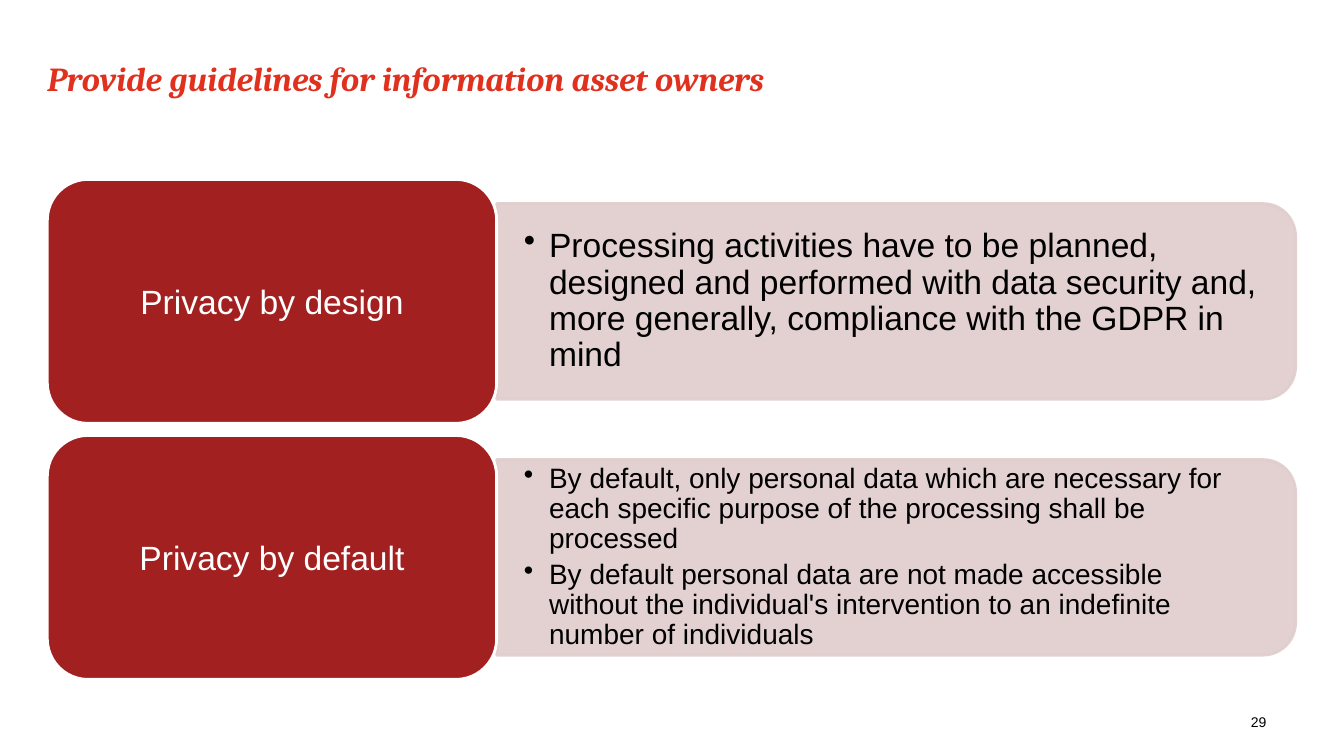
from dataclasses import dataclass

from lxml import etree
from pptx import Presentation
from pptx.dml.color import RGBColor
from pptx.enum.shapes import MSO_SHAPE
from pptx.enum.text import MSO_ANCHOR, MSO_AUTO_SIZE, PP_ALIGN
from pptx.oxml.ns import qn
from pptx.util import Inches, Pt

ROUNDED = MSO_SHAPE.ROUNDED_RECTANGLE
ROUNDED_TOP = MSO_SHAPE.ROUND_2_SAME_RECTANGLE
TOP, MIDDLE = MSO_ANCHOR.TOP, MSO_ANCHOR.MIDDLE
LEFT, CENTER, RIGHT = PP_ALIGN.LEFT, PP_ALIGN.CENTER, PP_ALIGN.RIGHT
NO_AUTOFIT = MSO_AUTO_SIZE.NONE
TITLE_ONLY = 5


@dataclass(frozen=True)
class Theme:
    title_color: str = "E0301E"
    label_fill: str = "A32020"
    panel_fill: str = "E0CDCD"
    white: str = "FFFFFF"
    black: str = "000000"
    title_font: str = "Cambria"
    body_font: str = "Arial"
    large: float = 24
    medium: float = 20
    small: float = 10
    outline: float = 2
    panel_opacity: int = 90


@dataclass(frozen=True)
class Principle:
    label: str
    points: tuple[str, ...]
    size: float


THEME = Theme()

PRINCIPLES = (
    Principle("Privacy by design", (
        "Processing activities have to be planned, designed and performed with data "
        "security and, more generally, compliance with the GDPR in mind",
    ), THEME.large),
    Principle("Privacy by default", (
        "By default, only personal data which are necessary for each specific purpose "
        "of the processing shall be processed",
        "By default personal data are not made accessible without the individual's "
        "intervention to an indefinite number of individuals",
    ), THEME.medium),
)

# Row geometry in inches
MARGIN, FIRST_TOP, ROW_PITCH = 0.47, 1.78, 2.54
LABEL_WIDTH, LABEL_HEIGHT = 4.46, 2.42
PANEL_WIDTH, PANEL_HEIGHT = 7.93, 1.94
TEXT_WIDTH, TEXT_HEIGHT = 7.83, 1.75


def place(box, left: float, top: float, width: float, height: float) -> None:
    box.left, box.top = Inches(left), Inches(top)
    box.width, box.height = Inches(width), Inches(height)


def write(box, lines: tuple[str, ...], size: float, color: str, font: str = THEME.body_font,
          align=LEFT, anchor=TOP, inset: tuple[float, float] = (0, 0)) -> None:
    frame = box.text_frame
    frame.text = "\n".join(lines)
    frame.word_wrap = True
    frame.auto_size = NO_AUTOFIT
    frame.vertical_anchor = anchor
    frame.margin_left = frame.margin_right = Inches(inset[0])
    frame.margin_top = frame.margin_bottom = Inches(inset[1])
    for para in frame.paragraphs:
        para.alignment = align
        for span in para.runs:
            span.font.name = font
            span.font.size = Pt(size)
            span.font.color.rgb = RGBColor.from_string(color)


def add_block(page, shape_type, fill: str, line: str):
    block = page.shapes.add_shape(shape_type, 0, 0, 0, 0)
    block.shadow.inherit = False
    block.fill.solid()
    block.fill.fore_color.rgb = RGBColor.from_string(fill)
    block.line.color.rgb = RGBColor.from_string(line)
    block.line.width = Pt(THEME.outline)
    return block


def set_opacity(block, percent: int) -> None:
    for color in block.fill._xPr.iter(qn("a:srgbClr")):
        etree.SubElement(color, qn("a:alpha"), val=str(percent * 1000))


def add_bullets(box) -> None:
    for para in box.text_frame.paragraphs:
        para.line_spacing = 0.9
        para.space_after = Pt(3.6)
        props = para._p.get_or_add_pPr()
        props.set("marL", str(Inches(0.25)))
        props.set("indent", str(-Inches(0.25)))
        etree.SubElement(props, qn("a:buChar"), char="•")


def add_principle(page, principle: Principle, top: float) -> None:
    middle = top + LABEL_HEIGHT / 2
    panel_left = MARGIN + LABEL_WIDTH

    # Panel, turned so that its rounded side faces right
    panel = add_block(page, ROUNDED_TOP, THEME.panel_fill, THEME.panel_fill)
    place(panel, panel_left + (PANEL_WIDTH - PANEL_HEIGHT) / 2, middle - PANEL_WIDTH / 2,
          PANEL_HEIGHT, PANEL_WIDTH)
    panel.rotation = 90
    set_opacity(panel, THEME.panel_opacity)

    # Bulleted explanation
    points = page.shapes.add_textbox(0, 0, 0, 0)
    place(points, panel_left, middle - TEXT_HEIGHT / 2, TEXT_WIDTH, TEXT_HEIGHT)
    write(points, principle.points, principle.size, THEME.black, anchor=MIDDLE,
          inset=(0.27, 0.14))
    add_bullets(points)

    # Label
    label = add_block(page, ROUNDED, THEME.label_fill, THEME.white)
    place(label, MARGIN, top, LABEL_WIDTH, LABEL_HEIGHT)
    write(label, (principle.label,), THEME.large, THEME.white, align=CENTER, anchor=MIDDLE)


def main() -> None:
    deck = Presentation()
    deck.slide_width, deck.slide_height = Inches(13.34), Inches(7.5)
    page = deck.slides.add_slide(deck.slide_layouts[TITLE_ONLY])

    # Title
    title = page.shapes.title
    place(title, MARGIN, 0.57, 12.39, 0.81)
    write(title, ("Provide guidelines for information asset owners",), THEME.large,
          THEME.title_color, THEME.title_font)
    title_font = title.text_frame.paragraphs[0].runs[0].font
    title_font.bold = title_font.italic = True

    # Page number
    number = page.shapes.add_textbox(0, 0, 0, 0)
    place(number, 10.34, 7.08, 2.23, 0.17)
    write(number, ("29",), THEME.small, THEME.black, align=RIGHT)

    # Principles
    for row, principle in enumerate(PRINCIPLES):
        add_principle(page, principle, FIRST_TOP + row * ROW_PITCH)

    deck.save("out.pptx")


if __name__ == "__main__":
    main()
